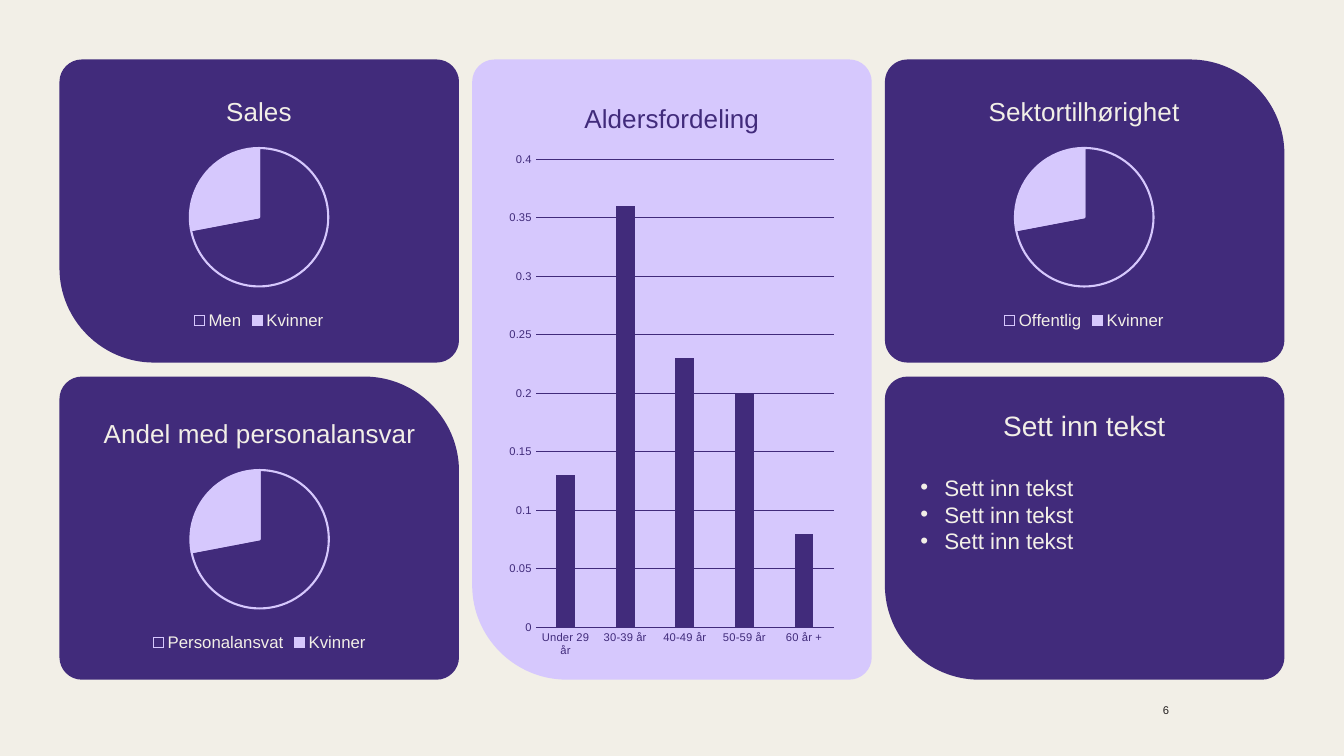
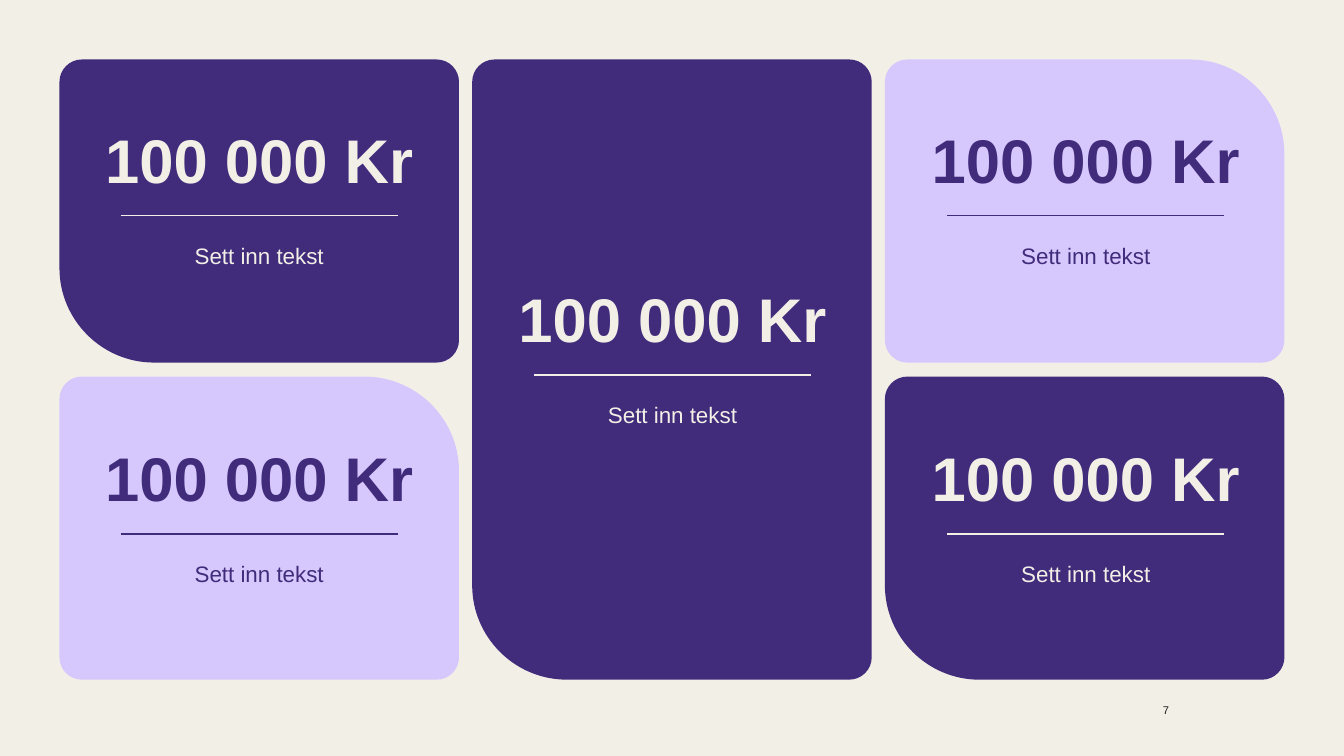
from dataclasses import dataclass

from lxml.etree import SubElement
from pptx import Presentation
from pptx.chart.data import CategoryChartData
from pptx.dml.color import RGBColor
from pptx.enum.chart import XL_CHART_TYPE, XL_LEGEND_POSITION, XL_TICK_MARK
from pptx.enum.shapes import MSO_CONNECTOR, MSO_SHAPE
from pptx.enum.text import PP_ALIGN
from pptx.oxml.ns import qn
from pptx.util import Pt


@dataclass(frozen=True)
class Theme:
    cream: RGBColor = RGBColor.from_string("F2EFE7")
    plum: RGBColor = RGBColor.from_string("412B7B")
    lilac: RGBColor = RGBColor.from_string("D6C8FD")
    black: RGBColor = RGBColor.from_string("231F20")
    font: str = "Arial"
    stat: float = 44
    head: float = 20
    title: float = 18.6
    body: float = 16
    legend: float = 12
    chart: float = 10
    small: float = 8


theme = Theme()

# Card grid
LEFT = TOP = 42.5
WIDTH, HEIGHT = 285.4, 216.5
COL, ROW = 294.8, 226.5
ROUND, WIDE = 16, 67.5
BEND = 0.55
# column, row, rows spanned, corner with the wide curve
CARDS = [
    (2, 1, 1, "bl"),
    (0, 1, 1, "tr"),
    (0, 0, 1, "bl"),
    (2, 0, 1, "tr"),
    (1, 0, 2, "bl"),
]
DARK, LIGHT = (theme.plum, theme.cream), (theme.lilac, theme.plum)
LOOKS = {6: [DARK, DARK, DARK, DARK, LIGHT], 7: [DARK, LIGHT, DARK, LIGHT, DARK]}


def add_text(slide, box, lines, ink, align=PP_ALIGN.CENTER, bold=False):
    """Add (text, size) lines in a box without margins; return its paragraphs."""
    frame = slide.shapes.add_textbox(*map(Pt, box)).text_frame
    frame.word_wrap = True
    frame.margin_left = frame.margin_right = 0
    frame.margin_top = frame.margin_bottom = 0
    for i, (line, size) in enumerate(lines):
        par = frame.add_paragraph() if i else frame.paragraphs[0]
        par.alignment = align
        run = par.add_run()
        run.text = line
        run.font.name, run.font.size, run.font.bold = theme.font, Pt(size), bold
        run.font.color.rgb = ink
    return frame.paragraphs


def add_plot(slide, kind, box, title, points, ink, area):
    """Add a titled chart; area is the inner plot as x, y, w, h shares."""
    data = CategoryChartData()
    data.categories = [name for name, _ in points]
    data.add_series("Series 1", [value for _, value in points])
    chart = slide.shapes.add_chart(kind, *map(Pt, box), data).chart
    chart.font.name, chart.font.size = theme.font, Pt(theme.chart)
    chart.font.color.rgb = ink
    run = chart.chart_title.text_frame.paragraphs[0].add_run()
    run.text = title
    run.font.name, run.font.size, run.font.bold = theme.font, Pt(theme.title), False
    run.font.color.rgb = ink
    chart.chart_title.include_in_layout = False

    plot = chart._chartSpace.find(".//" + qn("c:plotArea"))
    for old in plot.findall(qn("c:layout")):
        plot.remove(old)
    layout = SubElement(plot, qn("c:layout"))
    plot.insert(0, layout)
    manual = SubElement(layout, qn("c:manualLayout"))
    marks = [("layoutTarget", "inner"), ("xMode", "edge"), ("yMode", "edge")]
    for tag, val in marks + list(zip("xywh", area)):
        SubElement(manual, qn("c:" + tag)).set("val", str(val))
    return chart


prs = Presentation()
prs.slide_width, prs.slide_height = Pt(960), Pt(540)

# Shared cards and page numbers
slides = {}
for page, looks in LOOKS.items():
    slide = slides[page] = prs.slides.add_slide(prs.slide_layouts[6])
    for (col, row, span, wide), (fill, _) in zip(CARDS, looks):
        x, y = LEFT + col * COL, TOP + row * ROW
        right, low = x + WIDTH, y + HEIGHT + (span - 1) * ROW
        big, small = (WIDE, ROUND) if wide == "tr" else (ROUND, WIDE)
        # each corner: its tip, then where its curve starts and ends
        corners = [
            ((x, y), (x, y + ROUND), (x + ROUND, y)),
            ((right, y), (right - big, y), (right, y + big)),
            ((right, low), (right, low - ROUND), (right - ROUND, low)),
            ((x, low), (x + small, low), (x, low - small)),
        ]
        edge = [(Pt(px), Pt(py)) for _, *ends in corners for px, py in ends]
        outline = slide.shapes.build_freeform(*edge[0])
        outline.add_line_segments(edge[1:], close=True)
        card = outline.convert_to_shape()
        card.shadow.inherit = False
        card.fill.solid()
        card.fill.fore_color.rgb = fill
        card.line.fill.background()
        sides = list(card._element.iter(qn("a:lnTo")))
        for side, (tip, start, end) in zip(sides[::2], corners):
            curve = SubElement(side.getparent(), qn("a:cubicBezTo"))
            side.addprevious(curve)
            side.getparent().remove(side)
            for (px, py), bend in ((start, BEND), (end, BEND), (end, 0)):
                spot = SubElement(curve, qn("a:pt"))
                spot.set("x", str(int(Pt(px + bend * (tip[0] - px) - x))))
                spot.set("y", str(int(Pt(py + bend * (tip[1] - py) - y))))
    add_text(slide, (814, 502.5, 21, 11.5), [(str(page), theme.small)],
             theme.black, PP_ALIGN.RIGHT)

# Shared ground, placed behind everything on the master
ground = slides[6].shapes.add_shape(MSO_SHAPE.RECTANGLE, 0, 0, Pt(960), Pt(540))
ground.shadow.inherit = False
ground.fill.solid()
ground.fill.fore_color.rgb = theme.cream
ground.line.fill.background()
prs.slide_master.shapes._spTree.insert(2, ground._element)

# Charts
slide = slides[6]
pies = [
    ((103.5, 56.5, 163, 182), "Sales", "Men"),
    ((683.5, 56.5, 182, 182), "Sektortilhørighet", "Offentlig"),
    ((12.5, 286.5, 346, 182), "Andel med personalansvar", "Personalansvat"),
]
for box, title, name in pies:
    share = round(99 / box[2], 3)
    area = (round((1 - share) / 2, 3), 0.27, share, 0.545)
    chart = add_plot(slide, XL_CHART_TYPE.PIE, box, title,
                     [(name, 72), ("Kvinner", 28)], theme.cream, area)
    chart.has_legend = True
    legend = chart.legend
    legend.position = XL_LEGEND_POSITION.BOTTOM
    legend.include_in_layout = False
    legend.font.name, legend.font.size = theme.font, Pt(theme.legend)
    legend.font.color.rgb = theme.cream
    pie = chart.plots[0]
    pie.vary_by_categories = True
    for i, fill in enumerate((theme.plum, theme.lilac)):
        look = pie.series[0].points[i].format
        look.fill.solid()
        look.fill.fore_color.rgb = fill
        look.line.color.rgb = theme.lilac
        look.line.width = Pt(1.5)

# Text card
first, *points = add_text(
    slide, (657.5, 291.5, 234, 106.5),
    [("Sett inn tekst", theme.head)] + [("Sett inn tekst", theme.body)] * 3,
    theme.cream)
for par in points:
    par.alignment = PP_ALIGN.LEFT
    props = par._p.get_or_add_pPr()
    props.set("marL", str(Pt(17)))
    props.set("indent", str(-Pt(17)))
    SubElement(props, qn("a:buFont")).set("typeface", theme.font)
    SubElement(props, qn("a:buChar")).set("char", "•")
    par.font.size = Pt(theme.body)
points[0].space_before = Pt(23)

# Age chart
ages = [("Under 29 år", 0.13), ("30-39 år", 0.36), ("40-49 år", 0.23),
        ("50-59 år", 0.2), ("60 år +", 0.08)]
chart = add_plot(slide, XL_CHART_TYPE.COLUMN_CLUSTERED, (359, 57, 242, 420.5),
                 "Aldersfordeling", ages, theme.plum, (0.098, 0.135, 0.88, 0.795))
chart.has_legend = False
bars = chart.plots[0]
bars.vary_by_categories = False
bars.gap_width, bars.overlap = 219, -27
fill = bars.series[0].format.fill
fill.solid()
fill.fore_color.rgb = theme.plum
cats, vals = chart.category_axis, chart.value_axis
for axis in (cats, vals):
    axis.major_tick_mark = axis.minor_tick_mark = XL_TICK_MARK.NONE
    font = axis.tick_labels.font
    font.name, font.size = theme.font, Pt(theme.small)
    font.color.rgb = theme.plum
vals.minimum_scale, vals.maximum_scale, vals.major_unit = 0, 0.4, 0.05
vals.has_major_gridlines = True
vals.format.line.fill.background()
for line in (cats.format.line, vals.major_gridlines.format.line):
    line.color.rgb = theme.plum
    line.width = Pt(0.75)

# Key figures
slide = slides[7]
for (col, row, span, _), (_, ink) in zip(CARDS, LOOKS[7]):
    mid = 185.2 + col * 295.2
    y = TOP + (row + (span - 1) / 2) * 227.5
    add_text(slide, (mid - 117, y + 44.5, 234, 53), [("100 000 Kr", theme.stat)],
             ink, bold=True)
    add_text(slide, (mid - 117, y + 130.3, 234, 19.5),
             [("Sett inn tekst", theme.body)], ink)
    rule = slide.shapes.add_connector(MSO_CONNECTOR.STRAIGHT, Pt(mid - 99),
                                      Pt(y + 111.5), Pt(mid + 99), Pt(y + 111.5))
    rule.line.color.rgb = ink
    rule.line.width = Pt(1)
    SubElement(rule._element.spPr, qn("a:effectLst"))

prs.save("out.pptx")
